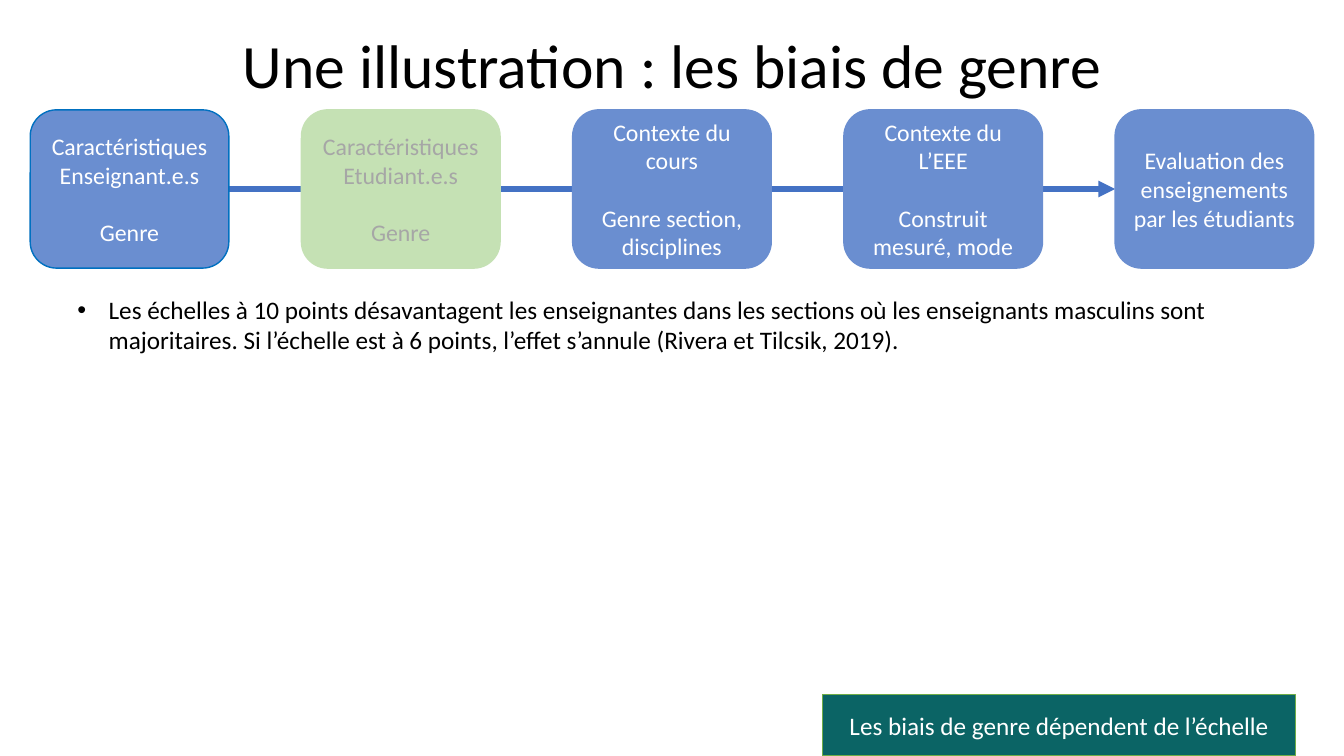
import pptx
import pptx.util
import pptx.dml.color
import pptx.enum.shapes
import pptx.enum.text
import pptx.oxml.ns
from lxml import etree

Inches = pptx.util.Inches
Pt = pptx.util.Pt
RGBColor = pptx.dml.color.RGBColor
Shape = pptx.enum.shapes.MSO_SHAPE
Align = pptx.enum.text.PP_ALIGN
Anchor = pptx.enum.text.MSO_ANCHOR
Fit = pptx.enum.text.MSO_AUTO_SIZE
qn = pptx.oxml.ns.qn

BLACK = RGBColor(0x00, 0x00, 0x00)
WHITE = RGBColor(0xFF, 0xFF, 0xFF)
GREY = RGBColor(0xA6, 0xA6, 0xA6)
BLUE = RGBColor(0x6A, 0x8E, 0xD0)
EDGE = RGBColor(0x00, 0x70, 0xC0)
ARROW = RGBColor(0x44, 0x72, 0xC4)
PALE = RGBColor(0xC5, 0xE1, 0xB4)
TEAL = RGBColor(0x0B, 0x64, 0x65)
GREEN = RGBColor(0x70, 0xAD, 0x47)


class Deck:
    font = "Calibri"

    def __init__(self):
        self.prs = pptx.Presentation()
        self.prs.slide_width = Inches(13.33)
        self.prs.slide_height = Inches(7.5)
        self.slide = self.prs.slides.add_slide(self.prs.slide_layouts[5])

    def style(self, para, size, color, align):
        para.alignment = align
        for run in para.runs:
            run.font.name = self.font
            run.font.size = Pt(size)
            run.font.color.rgb = color

    def title(self, text, left, top, width, height):
        shape = self.slide.shapes.title
        shape.left, shape.top = Inches(left), Inches(top)
        shape.width, shape.height = Inches(width), Inches(height)
        frame = shape.text_frame
        frame.text = text
        frame.auto_size = Fit.NONE
        frame.vertical_anchor = Anchor.MIDDLE
        para = frame.paragraphs[0]
        para.line_spacing = 0.9
        self.style(para, 44, BLACK, Align.CENTER)

    def box(self, kind, texts, left, top, width, height, fill, edge, color, size, gap=0):
        shape = self.slide.shapes.add_shape(
            kind, Inches(left), Inches(top), Inches(width), Inches(height))
        shape.shadow.inherit = False
        shape.fill.solid()
        shape.fill.fore_color.rgb = fill
        shape.line.color.rgb = edge
        shape.line.width = Pt(1)
        frame = shape.text_frame
        frame.word_wrap = True
        frame.vertical_anchor = Anchor.MIDDLE
        for i, text in enumerate(texts):
            para = frame.add_paragraph() if i else frame.paragraphs[0]
            para.text = text
            if i:
                para.space_before = Pt(gap)
            self.style(para, size, color, Align.CENTER)

    def arrow(self, start, end, y):
        line = self.slide.shapes.add_connector(
            pptx.enum.shapes.MSO_CONNECTOR.STRAIGHT,
            Inches(start), Inches(y), Inches(end), Inches(y))
        line.line.color.rgb = ARROW
        line.line.width = Pt(4)
        etree.SubElement(line.line._get_or_add_ln(), qn("a:tailEnd"), type="triangle")
        etree.SubElement(line._element.spPr, qn("a:effectLst"))

    def bullet(self, text, left, top, width, height):
        shape = self.slide.shapes.add_textbox(
            Inches(left), Inches(top), Inches(width), Inches(height))
        frame = shape.text_frame
        frame.word_wrap = True
        frame.auto_size = Fit.SHAPE_TO_FIT_TEXT
        para = frame.paragraphs[0]
        para.text = text
        props = para._p.get_or_add_pPr()
        props.set("marL", str(Inches(0.31)))
        props.set("indent", str(-Inches(0.31)))
        etree.SubElement(props, qn("a:buFont"), typeface="Arial")
        etree.SubElement(props, qn("a:buChar"), char="•")
        self.style(para, 18, BLACK, Align.LEFT)


def main():
    deck = Deck()

    # Title
    deck.title("Une illustration : les biais de genre", 0.92, 0.19, 11.5, 0.98)

    # Chain of factors, with the arrow behind the boxes
    steps = [
        (["Caractéristiques Enseignant.e.s", "Genre"], BLUE, EDGE, WHITE),
        (["Caractéristiques Etudiant.e.s", "Genre"], PALE, PALE, GREY),
        (["Contexte du cours", "Genre section, disciplines"], BLUE, BLUE, WHITE),
        (["Contexte du L’EEE", "Construit mesuré, mode"], BLUE, BLUE, WHITE),
        (["Evaluation des enseignements par les étudiants"], BLUE, BLUE, WHITE),
    ]
    left, pitch, top, width, height = 0.3, 2.69, 1.09, 1.97, 1.57
    deck.arrow(left + width, left + pitch * (len(steps) - 1), top + height / 2)
    for i, (texts, fill, edge, color) in enumerate(steps):
        deck.box(Shape.ROUNDED_RECTANGLE, texts, left + i * pitch, top, width, height,
                 fill, edge, color, 17, gap=20.7)

    # Finding
    deck.bullet(
        "Les échelles à 10 points désavantagent les enseignantes dans les sections "
        "où les enseignants masculins sont majoritaires. Si l’échelle est à 6 points, "
        "l’effet s’annule (Rivera et Tilcsik, 2019).", 0.67, 2.87, 12.36, 0.71)

    # Conclusion banner
    deck.box(Shape.RECTANGLE, ["Les biais de genre dépendent de l’échelle"],
             8.16, 6.89, 4.69, 0.61, TEAL, GREEN, WHITE, 18)

    deck.prs.save("out.pptx")


if __name__ == "__main__":
    main()
